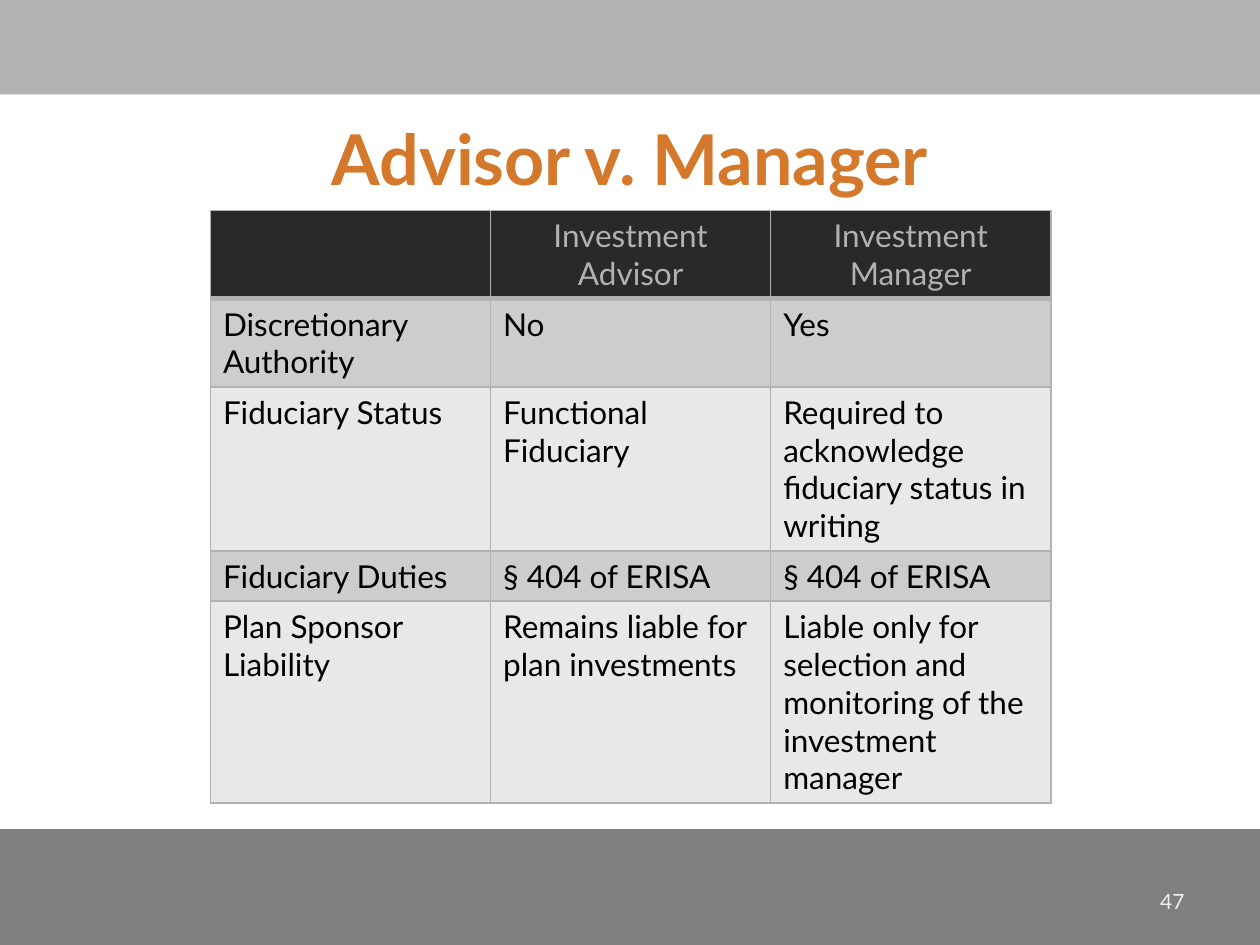
from lxml.etree import SubElement
from pptx import Presentation
from pptx.dml.color import RGBColor
from pptx.enum.shapes import MSO_SHAPE
from pptx.enum.text import MSO_ANCHOR, PP_ALIGN
from pptx.oxml.ns import qn
from pptx.util import Inches, Pt

FONT = "Lato"
WHITE = RGBColor(0xFF, 0xFF, 0xFF)
BLACK = RGBColor(0x00, 0x00, 0x00)
ORANGE = RGBColor(0xD4, 0x78, 0x2C)
LIGHT_GREY = RGBColor(0xB2, 0xB2, 0xB2)
DARK_GREY = RGBColor(0x80, 0x80, 0x80)
HEADER_FILL = RGBColor(0x29, 0x29, 0x29)
BAND_FILLS = (RGBColor(0xE8, 0xE8, 0xE8), RGBColor(0xCD, 0xCD, 0xCD))
PAGE_NUMBER = RGBColor(0xF0, 0xF0, 0xF0)

ROWS = [
    ("", "Investment Advisor", "Investment Manager"),
    ("Discretionary Authority", "No", "Yes"),
    ("Fiduciary Status", "Functional Fiduciary",
     "Required to acknowledge fiduciary status in writing"),
    ("Fiduciary Duties", "§ 404 of ERISA", "§ 404 of ERISA"),
    ("Plan Sponsor Liability", "Remains liable for plan investments",
     "Liable only for selection and monitoring of the investment manager"),
]
ROW_HEIGHTS = (0.67, 0.67, 1.24, 0.38, 1.53)


def style_paragraph(para, size, color, align, bold=False):
    para.alignment = align
    para.font.name = FONT
    para.font.size = Pt(size)
    para.font.bold = bold
    para.font.color.rgb = color


def add_border(cell, side, width):
    """Draw one cell side (L, R, T or B); call before filling the cell."""
    line = SubElement(cell._tc.get_or_add_tcPr(), qn(f"a:ln{side}"), w=str(Pt(width)))
    fill = SubElement(line, qn("a:solidFill"))
    SubElement(fill, qn("a:srgbClr"), val=str(LIGHT_GREY))


deck = Presentation()
deck.slide_width, deck.slide_height = Inches(10), Inches(7.5)
page = deck.slides.add_slide(deck.slide_layouts[6])

# Bands at the bottom and top
for top, height, color in ((6.58, 0.92, DARK_GREY), (0, 0.75, LIGHT_GREY)):
    band = page.shapes.add_shape(
        MSO_SHAPE.RECTANGLE, 0, Inches(top), deck.slide_width, Inches(height))
    band.shadow.inherit = False
    band.fill.solid()
    band.fill.fore_color.rgb = color
    band.line.fill.background()

# Title
title = page.shapes.add_textbox(Inches(0.25), Inches(0.86), Inches(9.5), Inches(0.78))
title.fill.solid()
title.fill.fore_color.rgb = WHITE
frame = title.text_frame
frame.word_wrap = True
frame.vertical_anchor = MSO_ANCHOR.MIDDLE
frame.margin_left = frame.margin_right = Inches(0.2)
frame.text = "Advisor v. Manager"
style_paragraph(frame.paragraphs[0], 40, ORANGE, PP_ALIGN.CENTER, bold=True)

# Comparison table
table = page.shapes.add_table(
    len(ROWS), len(ROWS[0]), Inches(1.67), Inches(1.67),
    Inches(6.67), Inches(sum(ROW_HEIGHTS))).table
for row_index, texts in enumerate(ROWS):
    table.rows[row_index].height = Inches(ROW_HEIGHTS[row_index])
    is_header = row_index == 0
    for column_index, text in enumerate(texts):
        cell = table.cell(row_index, column_index)
        for side in "LRTB":
            add_border(cell, side, 3 if is_header and side == "B" else 1)
        cell.fill.solid()
        cell.fill.fore_color.rgb = HEADER_FILL if is_header else BAND_FILLS[row_index % 2]
        cell.text = text
        style_paragraph(
            cell.text_frame.paragraphs[0], 18,
            LIGHT_GREY if is_header else BLACK,
            PP_ALIGN.CENTER if is_header else PP_ALIGN.LEFT)

# Page number
number = page.shapes.add_textbox(Inches(7.17), Inches(6.95), Inches(2.33), Inches(0.4))
number.text_frame.word_wrap = True
number.text_frame.vertical_anchor = MSO_ANCHOR.MIDDLE
number.text_frame.text = "47"
style_paragraph(number.text_frame.paragraphs[0], 12, PAGE_NUMBER, PP_ALIGN.RIGHT)

deck.save("out.pptx")
